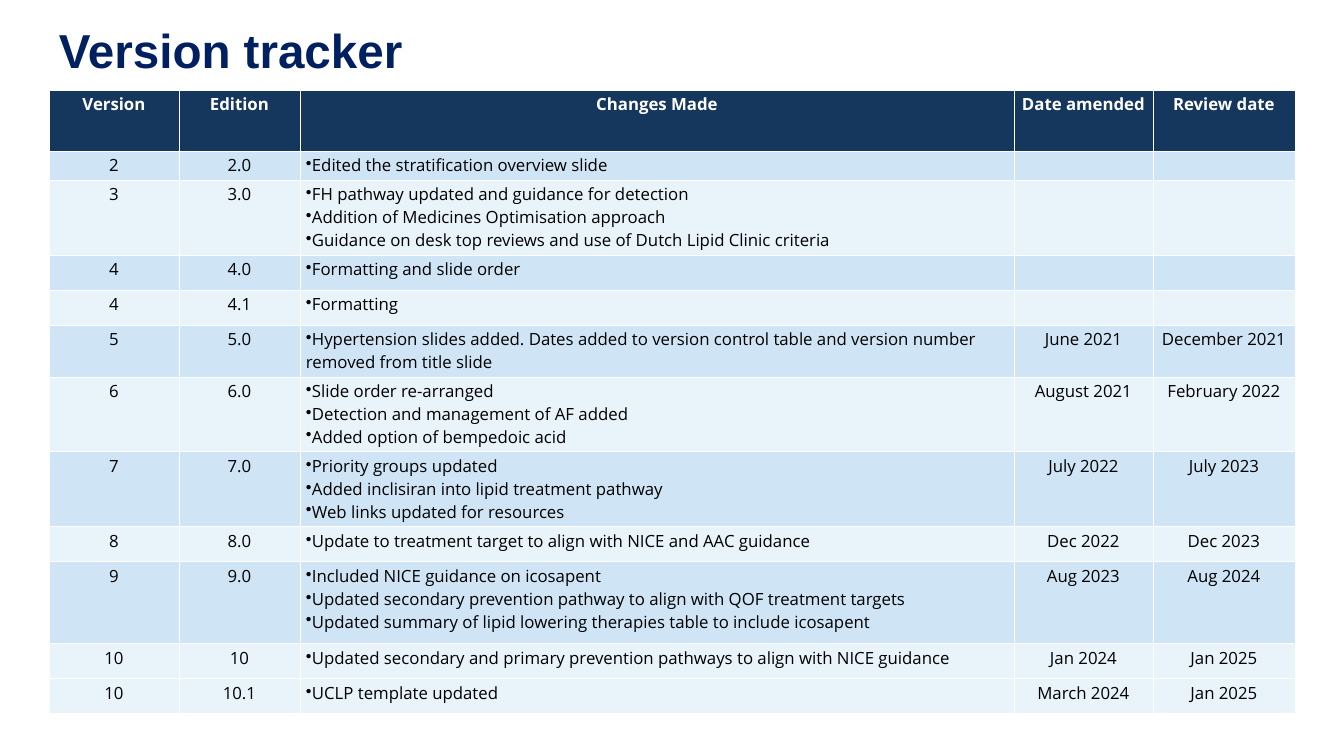
from lxml import etree
from pptx import Presentation
from pptx.dml.color import RGBColor
from pptx.enum.text import MSO_ANCHOR, PP_ALIGN
from pptx.oxml.ns import qn
from pptx.util import Emu, Pt

BOTTOM = MSO_ANCHOR.BOTTOM
CENTER, LEFT = PP_ALIGN.CENTER, PP_ALIGN.LEFT

# Content: version, edition, changes, date amended, review date
TITLE = "Version tracker"
HEADINGS = ("Version", "Edition", ["Changes Made"], "Date amended", "Review date")
VERSIONS = [
    ("2", "2.0", ["Edited the stratification overview slide"], "", ""),
    ("3", "3.0", ["FH pathway updated and guidance for detection",
                  "Addition of Medicines Optimisation approach",
                  "Guidance on desk top reviews and use of Dutch Lipid Clinic criteria"], "", ""),
    ("4", "4.0", ["Formatting and slide order"], "", ""),
    ("4", "4.1", ["Formatting"], "", ""),
    ("5", "5.0", ["Hypertension slides added. Dates added to version control table "
                  "and version number removed from title slide"],
     "June 2021", "December 2021"),
    ("6", "6.0", ["Slide order re-arranged",
                  "Detection and management of AF added",
                  "Added option of bempedoic acid"], "August 2021", "February 2022"),
    ("7", "7.0", ["Priority groups updated",
                  "Added inclisiran into lipid treatment pathway",
                  "Web links updated for resources"], "July 2022", "July 2023"),
    ("8", "8.0", ["Update to treatment target to align with NICE and AAC guidance"],
     "Dec 2022", "Dec 2023"),
    ("9", "9.0", ["Included NICE guidance on icosapent",
                  "Updated secondary prevention pathway to align with QOF treatment targets",
                  "Updated summary of lipid lowering therapies table to include icosapent"],
     "Aug 2023", "Aug 2024"),
    ("10", "10", ["Updated secondary and primary prevention pathways to align with NICE guidance"],
     "Jan 2024", "Jan 2025"),
    ("10", "10.1", ["UCLP template updated"], "March 2024", "Jan 2025"),
]

# Layout in px, and format values
SCALE = 914400 / 100.8
SLIDE_SIZE = (1344, 756)
TITLE_BOX = (49, 15, 939, 68)
TABLE_ORIGIN = (49, 90)
COLUMN_WIDTHS = (130, 121, 714, 139, 142)
ROW_HEIGHTS = (61, 29, 75, 35, 35, 52, 75, 75, 35, 82, 35, 35)
CELL_MARGINS = {"margin_left": 6, "margin_right": 6, "margin_top": 3, "margin_bottom": 3}
COLORS = {"title": "002060", "header": "15375D", "dark": "CFE5F5", "light": "E8F3FA",
          "white": "FFFFFF", "text": "000000"}
TITLE_FONT = {"name": "Arial", "size": Pt(34), "bold": True}
HEADING_FONT = {"name": "Open Sans", "size": Pt(12), "bold": True}
BODY_FONT = {**HEADING_FONT, "bold": False}


def px(length):
    return Emu(round(length * SCALE))


def color(name):
    return RGBColor.from_string(COLORS[name])


def write(paragraph, text, font_values, color_name, alignment):
    paragraph.alignment = alignment
    run = paragraph.add_run()
    run.text = text
    for name, value in font_values.items():
        setattr(run.font, name, value)
    run.font.color.rgb = color(color_name)


def add_bullet(paragraph):
    properties = paragraph._p.get_or_add_pPr()
    properties.set("marL", "0")
    properties.set("indent", "0")
    etree.SubElement(properties, qn("a:buChar"), char="•")


def add_borders(cell):
    properties = cell._tc.get_or_add_tcPr()
    for side in ("a:lnL", "a:lnR", "a:lnT", "a:lnB"):
        line = etree.SubElement(properties, qn(side), w=str(Pt(0.5)))
        fill = etree.SubElement(line, qn("a:solidFill"))
        etree.SubElement(fill, qn("a:srgbClr"), val=COLORS["white"])


def fill_cell(cell, content, fill_name, is_heading):
    for name, value in CELL_MARGINS.items():
        setattr(cell, name, px(value))
    add_borders(cell)
    cell.fill.solid()
    cell.fill.fore_color.rgb = color(fill_name)
    frame = cell.text_frame
    if not content:
        # An empty cell keeps the body size so its row does not grow
        etree.SubElement(frame.paragraphs[0]._p, qn("a:endParaRPr"), sz="1200")
        return
    bulleted = isinstance(content, list) and not is_heading
    lines = content if isinstance(content, list) else [content]
    for index, text in enumerate(lines):
        paragraph = frame.add_paragraph() if index else frame.paragraphs[0]
        if bulleted:
            add_bullet(paragraph)
        write(paragraph, text, HEADING_FONT if is_heading else BODY_FONT,
              "white" if is_heading else "text", LEFT if bulleted else CENTER)


def add_version_table(slide):
    rows = [HEADINGS, *VERSIONS]
    size = (sum(COLUMN_WIDTHS), sum(ROW_HEIGHTS))
    table = slide.shapes.add_table(len(rows), len(COLUMN_WIDTHS),
                                   *map(px, TABLE_ORIGIN + size)).table
    for column, width in zip(table.columns, COLUMN_WIDTHS):
        column.width = px(width)
    for index, (row, height, contents) in enumerate(zip(table.rows, ROW_HEIGHTS, rows)):
        row.height = px(height)
        # Bands alternate, but both editions of version 10 stay light
        banded = index % 2 and index < len(rows) - 1
        fill_name = "header" if index == 0 else "dark" if banded else "light"
        for cell, content in zip(row.cells, contents):
            fill_cell(cell, content, fill_name, index == 0)


def main():
    presentation = Presentation()
    presentation.slide_width, presentation.slide_height = map(px, SLIDE_SIZE)
    slide = presentation.slides.add_slide(presentation.slide_layouts[6])
    add_version_table(slide)

    # Title
    frame = slide.shapes.add_textbox(*map(px, TITLE_BOX)).text_frame
    frame.word_wrap = True
    frame.vertical_anchor = BOTTOM
    write(frame.paragraphs[0], TITLE, TITLE_FONT, "title", LEFT)

    presentation.save("out.pptx")


if __name__ == "__main__":
    main()
